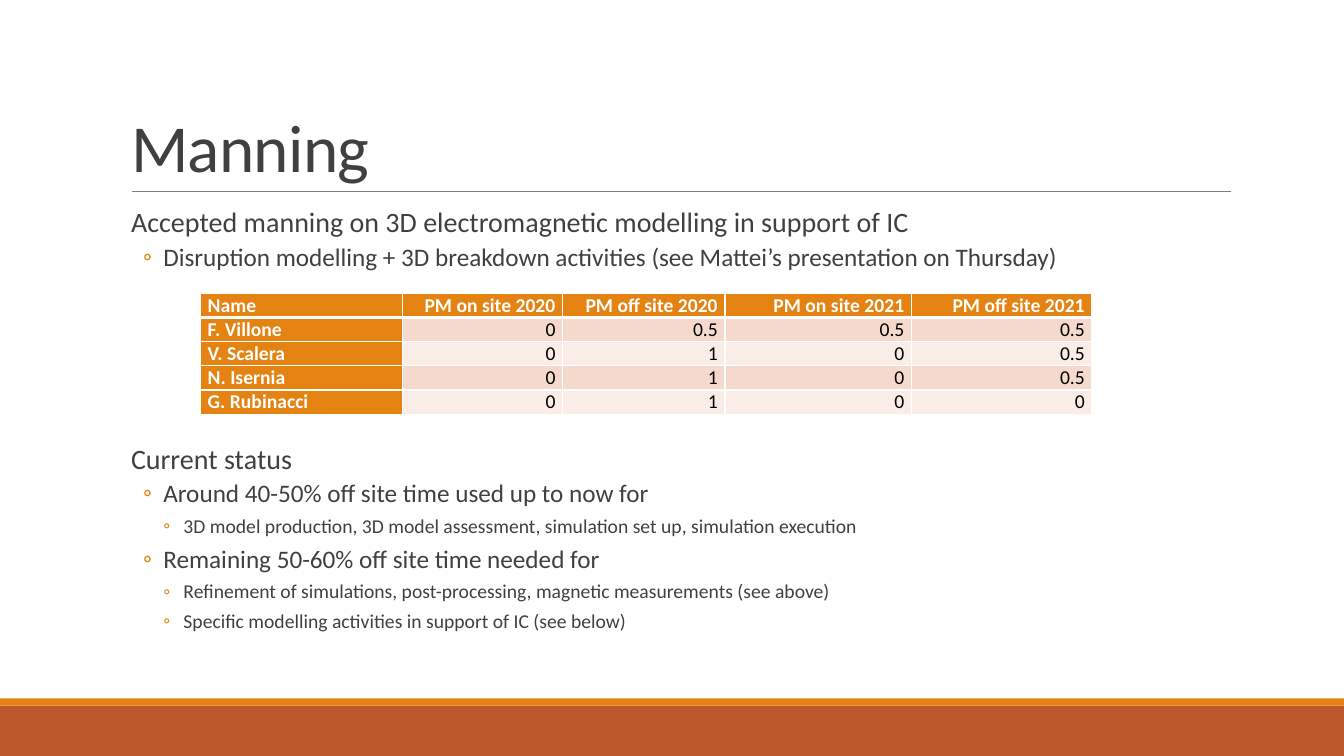
from pptx import Presentation
from pptx.dml.color import RGBColor
from pptx.enum.shapes import MSO_CONNECTOR, MSO_SHAPE
from pptx.enum.text import MSO_ANCHOR, MSO_AUTO_SIZE, PP_ALIGN
from pptx.oxml.ns import qn
from pptx.util import Inches, Pt
from lxml import etree

RECTANGLE = MSO_SHAPE.RECTANGLE
STRAIGHT = MSO_CONNECTOR.STRAIGHT
MIDDLE, BOTTOM = MSO_ANCHOR.MIDDLE, MSO_ANCHOR.BOTTOM
LEFT, RIGHT = PP_ALIGN.LEFT, PP_ALIGN.RIGHT
NO_AUTO_SIZE = MSO_AUTO_SIZE.NONE

WHITE = RGBColor(0xFF, 0xFF, 0xFF)
BLACK = RGBColor(0x00, 0x00, 0x00)
TEXT_GREY = RGBColor(0x40, 0x40, 0x40)
RULE_GREY = RGBColor(0x80, 0x80, 0x80)
ORANGE = RGBColor(0xE4, 0x83, 0x12)
RUST = RGBColor(0xBD, 0x58, 0x2C)
BANDS = (RGBColor(0xF5, 0xD9, 0xCC), RGBColor(0xFA, 0xED, 0xE7))

FONT = "Calibri"
TABLE_GAP = 120  # points left free for the table between the two text parts

# Text size, left margin, first-line indent, space before and after by level
LEVELS = (
    {"size": 20, "margin": 0.1, "indent": 0, "before": 12, "after": 2},
    {"size": 18, "margin": 0.42, "indent": -0.2, "before": 2, "after": 4},
    {"size": 14, "margin": 0.62, "indent": -0.2, "before": 2, "after": 4},
)

BODY = (
    (0, "Accepted manning on 3D electromagnetic modelling in support of IC"),
    (1, "Disruption modelling + 3D breakdown activities (see Mattei’s presentation on Thursday)"),
    (0, "Current status"),
    (1, "Around 40-50% off site time used up to now for"),
    (2, "3D model production, 3D model assessment, simulation set up, simulation execution"),
    (1, "Remaining 50-60% off site time needed for"),
    (2, "Refinement of simulations, post-processing, magnetic measurements (see above)"),
    (2, "Specific modelling activities in support of IC (see below)"),
)

MANNING = (
    ("Name", "PM on site 2020", "PM off site 2020", "PM on site 2021", "PM off site 2021"),
    ("F. Villone", "0", "0.5", "0.5", "0.5"),
    ("V. Scalera", "0", "1", "0", "0.5"),
    ("N. Isernia", "0", "1", "0", "0.5"),
    ("G. Rubinacci", "0", "1", "0", "0"),
)
COLUMN_WIDTHS = (2, 1.59, 1.61, 1.85, 1.79)
ROW_HEIGHT = 0.24


def set_attributes(target, values):
    for name, value in values.items():
        setattr(target, name, value)


def add_run(paragraph, text, size, color, bold=False):
    run = paragraph.add_run()
    run.text = text
    set_attributes(run.font, {"name": FONT, "size": Pt(size), "bold": bold})
    run.font.color.rgb = color
    return run


def add_bar(slide, top, height, color):
    bar = slide.shapes.add_shape(
        RECTANGLE, 0, Inches(top), Inches(13.33), Inches(height))
    bar.shadow.inherit = False
    bar.fill.solid()
    bar.fill.fore_color.rgb = color
    bar.line.fill.background()


def add_rule(slide, left, right, top):
    rule = slide.shapes.add_connector(
        STRAIGHT, Inches(left), Inches(top), Inches(right), Inches(top))
    rule.line.color.rgb = RULE_GREY
    rule.line.width = Pt(0.5)
    etree.SubElement(rule._element.spPr, qn("a:effectLst"))


def format_title(slide, text):
    title = slide.shapes.title
    set_attributes(title, {"left": Inches(1.2), "top": Inches(0.31),
                           "width": Inches(11), "height": Inches(1.59)})
    set_attributes(title.text_frame, {"vertical_anchor": BOTTOM, "word_wrap": True,
                                      "auto_size": NO_AUTO_SIZE})
    paragraph = title.text_frame.paragraphs[0]
    set_attributes(paragraph, {"alignment": LEFT, "line_spacing": 0.85})
    run = add_run(paragraph, text, 48, TEXT_GREY)
    run.font._element.set("spc", "-50")


def add_bullet(properties):
    color = etree.SubElement(properties, qn("a:buClr"))
    etree.SubElement(color, qn("a:srgbClr"), val=str(ORANGE))
    etree.SubElement(properties, qn("a:buFont"), typeface=FONT)
    etree.SubElement(properties, qn("a:buChar"), char="◦")


def add_body(slide):
    box = slide.shapes.add_textbox(
        Inches(1.2), Inches(2.02), Inches(11), Inches(4.4))
    frame = box.text_frame
    set_attributes(frame, {"word_wrap": True, "margin_left": 0, "margin_right": 0})
    for index, (level, text) in enumerate(BODY):
        paragraph = frame.add_paragraph() if index else frame.paragraphs[0]
        style = LEVELS[level]
        before = TABLE_GAP if index and level == 0 else style["before"]
        set_attributes(paragraph, {"level": level, "line_spacing": 0.9,
                                   "space_before": Pt(before),
                                   "space_after": Pt(style["after"])})
        properties = paragraph._p.get_or_add_pPr()
        properties.set("marL", str(Inches(style["margin"])))
        properties.set("indent", str(Inches(style["indent"])))
        if level:
            add_bullet(properties)
        add_run(paragraph, text, style["size"], TEXT_GREY)


def add_borders(cell, row):
    widths = {"L": 1, "R": 1, "T": 3 if row == 1 else 1, "B": 3 if row == 0 else 1}
    properties = cell._tc.get_or_add_tcPr()
    for side, width in widths.items():
        line = etree.SubElement(properties, qn(f"a:ln{side}"), w=str(Pt(width)))
        fill = etree.SubElement(line, qn("a:solidFill"))
        etree.SubElement(fill, qn("a:srgbClr"), val=str(WHITE))


def fill_cell(cell, row, column, text):
    heading = row == 0 or column == 0
    set_attributes(cell, {"vertical_anchor": MIDDLE,
                          "margin_left": Inches(0.07), "margin_right": Inches(0.07),
                          "margin_top": 0, "margin_bottom": 0})
    add_borders(cell, row)
    cell.fill.solid()
    cell.fill.fore_color.rgb = ORANGE if heading else BANDS[(row - 1) % 2]
    paragraph = cell.text_frame.paragraphs[0]
    paragraph.alignment = RIGHT if column else LEFT
    add_run(paragraph, text, 14, WHITE if heading else BLACK, heading)


def add_manning_table(slide):
    table = slide.shapes.add_table(
        len(MANNING), len(COLUMN_WIDTHS), Inches(1.99), Inches(2.91),
        Inches(sum(COLUMN_WIDTHS)), Inches(ROW_HEIGHT * len(MANNING))).table
    for column, width in zip(table.columns, COLUMN_WIDTHS):
        column.width = Inches(width)
    for row, texts in enumerate(MANNING):
        table.rows[row].height = Inches(ROW_HEIGHT)
        for column, text in enumerate(texts):
            fill_cell(table.cell(row, column), row, column, text)


def main():
    presentation = Presentation()
    presentation.slide_width = Inches(13.33)
    presentation.slide_height = Inches(7.5)
    slide = presentation.slides.add_slide(presentation.slide_layouts[5])

    # Footer bars and the rule under the title
    add_bar(slide, 7, 0.5, RUST)
    add_bar(slide, 6.93, 0.07, ORANGE)
    add_rule(slide, 1.31, 12.21, 1.9)

    # Title, text and table
    format_title(slide, "Manning")
    add_body(slide)
    add_manning_table(slide)

    presentation.save("out.pptx")


if __name__ == "__main__":
    main()
